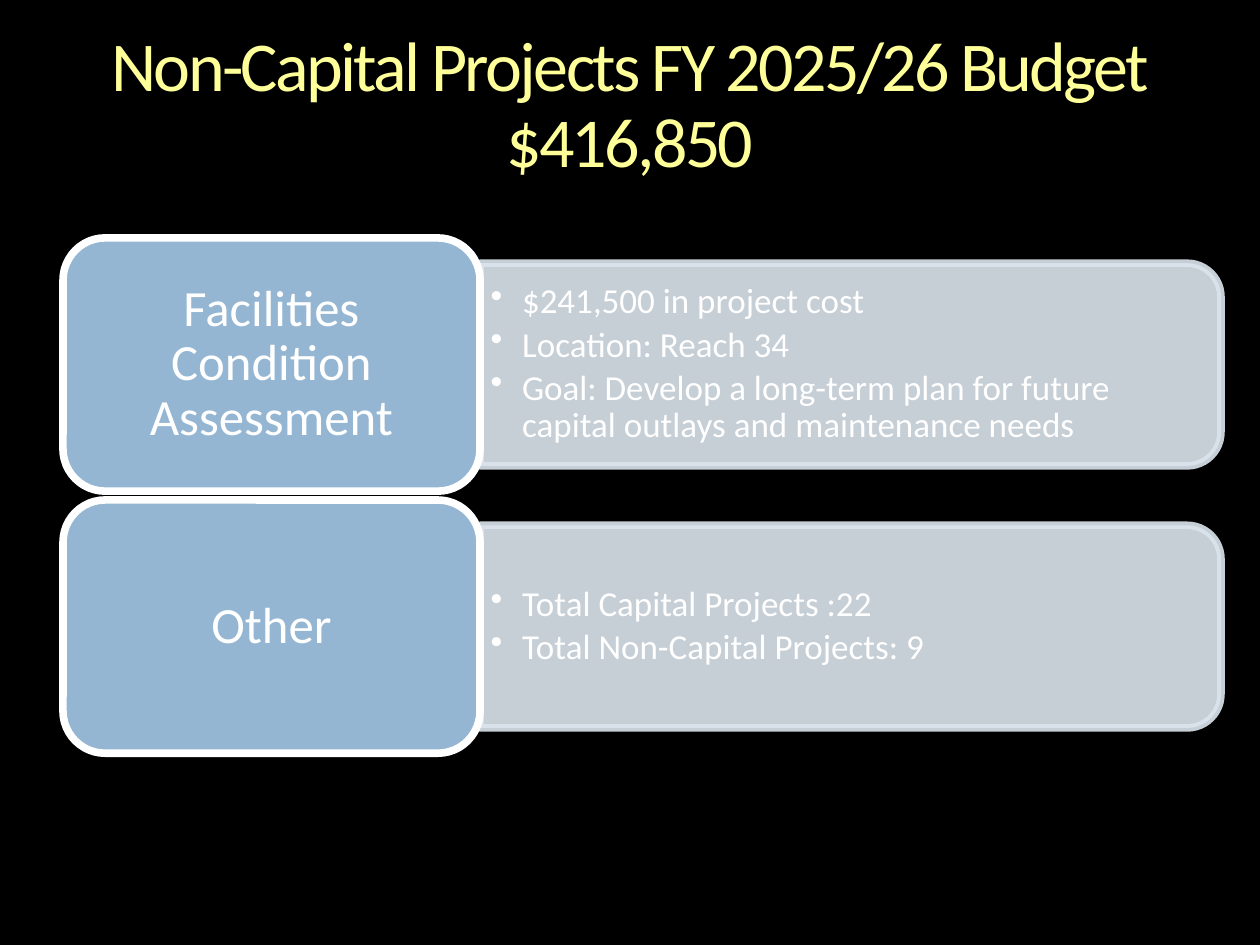
from lxml.etree import SubElement
from pptx import Presentation
from pptx.dml.color import RGBColor
from pptx.enum.shapes import MSO_SHAPE as Shape
from pptx.enum.text import MSO_ANCHOR as Anchor, MSO_AUTO_SIZE as AutoSize, PP_ALIGN as Align
from pptx.oxml.ns import qn
from pptx.util import Pt

ROWS = [
    ("Facilities Condition Assessment", [
        "$241,500 in project cost",
        "Location: Reach 34",
        "Goal: Develop a long-term plan for future capital outlays and maintenance needs",
    ]),
    ("Other", ["Total Capital Projects :22", "Total Non-Capital Projects: 9"]),
]
FIRST_MIDDLE, ROW_PITCH = 208.3, 149.75
CARD_LEFT, CARD_WIDTH, CARD_HEIGHT = 36, 238.3, 144.7
PANEL_LEFT = CARD_LEFT + CARD_WIDTH
PANEL_WIDTH, PANEL_HEIGHT = 423.4, 115.8
BULLETS_WIDTH, BULLETS_HEIGHT = 418.3, 104.4


def color(value):
    return RGBColor.from_string(value)


class SlideBuilder:
    font = "Calibri"
    background, title_color, text_color = "000000", "FFFF99", "FFFFFF"
    card_color, panel_color = "94B6D2", "DCE5EE"
    outline = 4.33
    panel_alpha = 90

    def __init__(self, page):
        self.page = page
        page.background.fill.solid()
        page.background.fill.fore_color.rgb = color(self.background)

    def style(self, para, size, value, align):
        para.alignment = align
        para.line_spacing = 0.9
        para.font.name = self.font
        para.font.size = Pt(size)
        para.font.bold = False
        para.font.color.rgb = color(value)

    def frame(self, box, horizontal, vertical, anchor):
        """Set wrapping, insets and anchor of a box and return its text frame."""
        frame = box.text_frame
        frame.word_wrap = True
        frame.auto_size = AutoSize.NONE
        frame.margin_left = frame.margin_right = Pt(horizontal)
        frame.margin_top = frame.margin_bottom = Pt(vertical)
        frame.vertical_anchor = anchor
        return frame

    def paint(self, shape, fill, line):
        shape.shadow.inherit = False
        shape.fill.solid()
        shape.fill.fore_color.rgb = color(fill)
        shape.line.color.rgb = color(line)
        shape.line.width = Pt(self.outline)

    def title(self, text):
        box = self.page.shapes.title
        box.left, box.top, box.width, box.height = Pt(30), Pt(18), Pt(660), Pt(87)
        frame = self.frame(box, 0, 0, Anchor.TOP)
        frame.text = text
        para = frame.paragraphs[0]
        self.style(para, 40, self.title_color, Align.CENTER)
        for span in para.runs:
            span.font._element.set("spc", "-150")

    def panel(self, middle):
        """Draw a panel rounded on its right side, as a quarter-turned shape."""
        center = PANEL_LEFT + PANEL_WIDTH / 2
        shape = self.page.shapes.add_shape(
            Shape.ROUND_2_SAME_RECTANGLE,
            Pt(center - PANEL_HEIGHT / 2), Pt(middle - PANEL_WIDTH / 2),
            Pt(PANEL_HEIGHT), Pt(PANEL_WIDTH))
        shape.rotation = 90
        self.paint(shape, self.panel_color, self.panel_color)
        for tint in shape._element.spPr.iter(qn("a:srgbClr")):
            SubElement(tint, qn("a:alpha"), val=str(self.panel_alpha * 1000))

    def bullets(self, middle, items):
        box = self.page.shapes.add_textbox(
            Pt(PANEL_LEFT), Pt(middle - BULLETS_HEIGHT / 2),
            Pt(BULLETS_WIDTH), Pt(BULLETS_HEIGHT))
        frame = self.frame(box, 6, 3, Anchor.MIDDLE)
        frame.text = "\n".join(items)
        for para in frame.paragraphs:
            para.level = 1
            props = para._p.get_or_add_pPr()
            props.set("marL", str(Pt(18)))
            props.set("indent", str(-Pt(18)))
            SubElement(props, qn("a:buChar"), char="•")
            self.style(para, 20, self.text_color, Align.LEFT)
            para.space_after = Pt(3)

    def card(self, middle, text):
        shape = self.page.shapes.add_shape(
            Shape.ROUNDED_RECTANGLE, Pt(CARD_LEFT), Pt(middle - CARD_HEIGHT / 2),
            Pt(CARD_WIDTH), Pt(CARD_HEIGHT))
        self.paint(shape, self.card_color, self.text_color)
        frame = self.frame(shape, 8.7, 4.3, Anchor.MIDDLE)
        frame.text = text
        self.style(frame.paragraphs[0], 29, self.text_color, Align.CENTER)


def main():
    deck = Presentation()
    deck.slide_width, deck.slide_height = Pt(720), Pt(540)
    builder = SlideBuilder(deck.slides.add_slide(deck.slide_layouts[5]))
    builder.title("Non-Capital Projects FY 2025/26 Budget\v$416,850")
    for index, (heading, items) in enumerate(ROWS):
        middle = FIRST_MIDDLE + index * ROW_PITCH
        builder.panel(middle)
        builder.bullets(middle, items)
        builder.card(middle, heading)
    deck.save("out.pptx")


if __name__ == "__main__":
    main()
